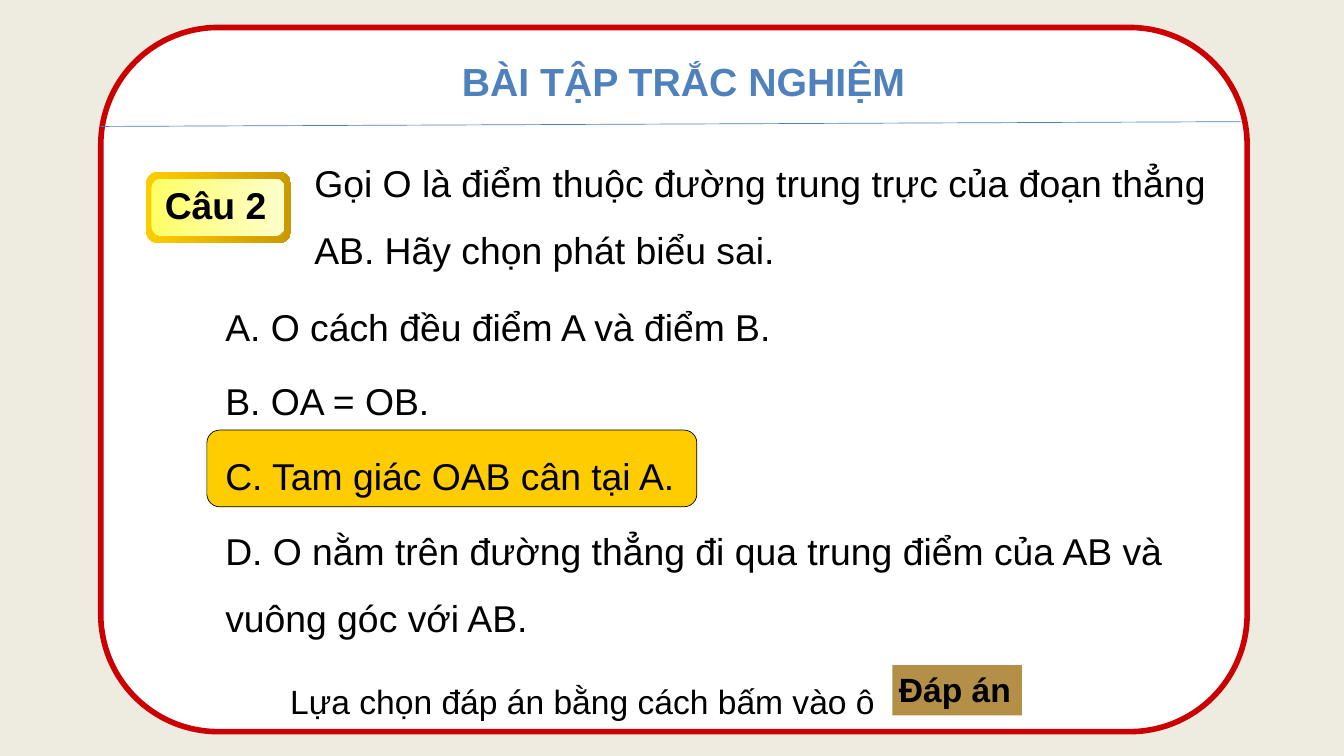
import pptx
import pptx.util
import pptx.dml.color
import pptx.enum.shapes
import pptx.enum.text
import lxml.etree

Cm = pptx.util.Cm
Pt = pptx.util.Pt
Kind = pptx.enum.shapes.MSO_SHAPE
Align = pptx.enum.text.PP_ALIGN


def color(code):
    return pptx.dml.color.RGBColor.from_string(code)


def write(shape, *lines, size=40, ink="000000", bold=False, align=Align.LEFT,
          gap=1.0, after=0, wrap=True):
    frame = shape.text_frame
    frame.word_wrap = wrap
    frame.auto_size = pptx.enum.text.MSO_AUTO_SIZE.NONE
    frame.vertical_anchor = pptx.enum.text.MSO_ANCHOR.TOP
    frame.text = "\n".join(lines)
    for para in frame.paragraphs:
        props = para._p.get_or_add_pPr()
        props.set("marL", "0")
        props.set("indent", "0")
        lxml.etree.SubElement(props, pptx.oxml.ns.qn("a:buNone"))
        para.alignment = align
        para.line_spacing = gap
        para.space_before = Pt(0)
        para.space_after = Pt(after)
        para.font.name = "Arial"
        para.font.size = Pt(size)
        para.font.bold = bold
        para.font.color.rgb = color(ink)


deck = pptx.Presentation()
deck.slide_width = Cm(50.8)
deck.slide_height = Cm(28.58)
slide = deck.slides.add_slide(deck.slide_layouts[1])
slide.background.fill.solid()
slide.background.fill.fore_color.rgb = color("EEECE1")
shapes = slide.shapes
title, body = slide.placeholders

panels = []
for kind, box, fill, edge, width in [
    (Kind.ROUNDED_RECTANGLE, (3.81, 1.04, 43.33, 26.62), "FFFFFF", "CC0000", 6),
    (Kind.RECTANGLE, (33.73, 25.15, 4.9, 1.9), "B38F47", None, 0),
    (Kind.ROUNDED_RECTANGLE, (7.82, 16.26, 18.52, 2.9), "FFCC00", "000000", 0.75),
]:
    panel = shapes.add_shape(kind, *map(Cm, box))
    panel.shadow.inherit = False
    panel.fill.solid()
    panel.fill.fore_color.rgb = color(fill)
    if edge:
        panel.line.color.rgb = color(edge)
        panel.line.width = Pt(width)
    else:
        panel.line.fill.background()
    panels.append(panel)
write(panels[1], "Đáp án", size=36, bold=True, wrap=False)

rule = shapes.add_connector(pptx.enum.shapes.MSO_CONNECTOR.STRAIGHT,
                            Cm(3.81), Cm(4.78), Cm(46.91), Cm(4.6))
rule.line.color.rgb = color("4B7EBC")
rule.line.width = Pt(0.75)
lxml.etree.SubElement(rule._element.spPr, pptx.oxml.ns.qn("a:effectLst"))

badge = shapes.add_group_shape()
for box, shades in [
    ((5.51, 6.5, 5.49, 2.69), ("FFCC00", "CC9900")),
    ((5.72, 6.76, 5.03, 2.16), ("FFFF66", "FFFFCC")),
]:
    plate = badge.shapes.add_shape(Kind.ROUNDED_RECTANGLE, *map(Cm, box))
    plate.shadow.inherit = False
    plate.line.fill.background()
    plate.fill.gradient()
    plate.fill.gradient_angle = 0
    for stop, shade, place in zip(plate.fill.gradient_stops, shades, (0, 1)):
        stop.color.rgb = color(shade)
        stop.position = place
label = badge.shapes.add_textbox(Cm(5.51), Cm(6.78), Cm(5.28), Cm(1.96))
write(label, "Câu 2", bold=True, align=Align.CENTER)

ask = shapes.add_textbox(Cm(11.63), Cm(5.08), Cm(35.08), Cm(5.38))
write(ask, "Gọi O là điểm thuộc đường trung trực của đoạn thẳng AB. "
      "Hãy chọn phát biểu sai.", gap=1.5, after=8)

hint = shapes.add_textbox(Cm(10.72), Cm(24.84), Cm(23.04), Cm(2.57))
write(hint, "Lựa chọn đáp án bằng cách bấm vào ô", size=36,
      align=Align.JUSTIFY, gap=1.5)

for holder, box in [
    (title, (17.2, 2.03, 17.53, 2.06)),
    (body, (8.26, 10.52, 37.8, 13.94)),
]:
    holder.left, holder.top, holder.width, holder.height = map(Cm, box)
    shapes._spTree.append(holder._element)
write(title, "BÀI TẬP TRẮC NGHIỆM", size=42, ink="4F81BD", bold=True)
write(body, "A. O cách đều điểm A và điểm B.", "B. OA = OB.",
      "C. Tam giác OAB cân tại A.",
      "D. O nằm trên đường thẳng đi qua trung điểm của AB và vuông góc với AB.",
      gap=1.5, after=8)

deck.save("out.pptx")
